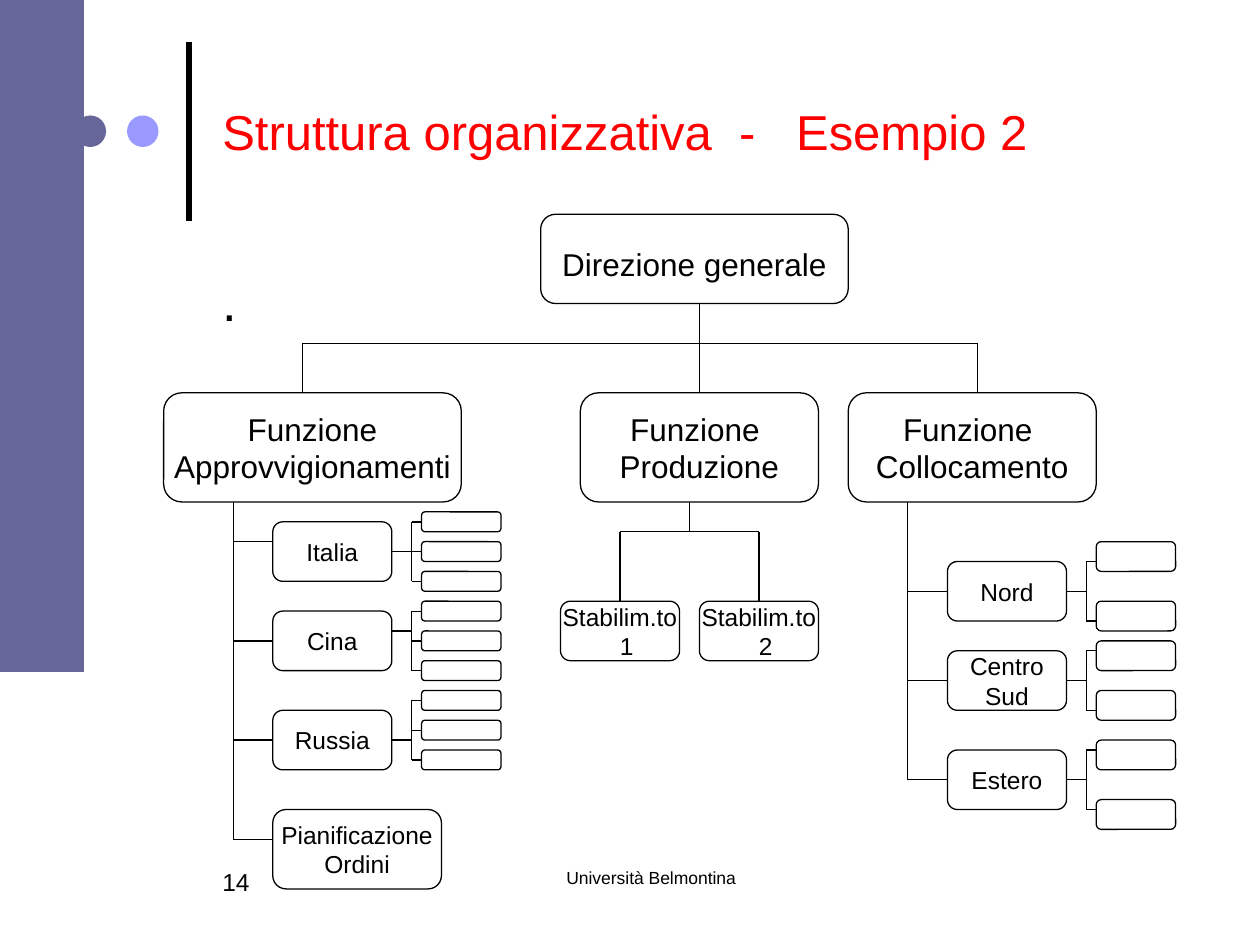
from dataclasses import dataclass, field, replace

from lxml import etree
from pptx import Presentation
from pptx.dml.color import RGBColor
from pptx.enum.shapes import MSO_CONNECTOR, MSO_SHAPE
from pptx.enum.text import MSO_ANCHOR, PP_ALIGN
from pptx.oxml.ns import qn
from pptx.util import Emu, Inches, Pt

BLACK = RGBColor(0x00, 0x00, 0x00)
WHITE = RGBColor(0xFF, 0xFF, 0xFF)
RED = RGBColor(0xFF, 0x00, 0x00)
SLATE = RGBColor(0x66, 0x66, 0x99)
LAVENDER = RGBColor(0x99, 0x99, 0xFF)
UNIT_BOX = MSO_SHAPE.FLOWCHART_ALTERNATE_PROCESS
LEAF_BOX = MSO_SHAPE.ROUNDED_RECTANGLE
RECTANGLE, OVAL = MSO_SHAPE.RECTANGLE, MSO_SHAPE.OVAL
STRAIGHT = MSO_CONNECTOR.STRAIGHT
LEFT, CENTER = PP_ALIGN.LEFT, PP_ALIGN.CENTER
TOP, MIDDLE = MSO_ANCHOR.TOP, MSO_ANCHOR.MIDDLE
SLIDE_WIDTH, SLIDE_HEIGHT = Inches(10), Inches(7.5)
FONT = "Arial"
UNIT_WIDTH, UNIT_HEIGHT = 12, 6
LEAF_WIDTH = 8


@dataclass
class Grid:
    """A square grid with its origin counted in steps, and the joints on it."""

    step: float
    left: float = 0
    top: float = 0
    joints: dict = field(default_factory=dict)

    def point(self, column, row):
        """Return the slide position of a grid point."""
        return (Emu(round((self.left + column) * self.step)),
                Emu(round((self.top + row) * self.step)))

    def area(self, column, row, width, height):
        """Return left, top, width and height of a grid area."""
        size = Emu(round(width * self.step)), Emu(round(height * self.step))
        return *self.point(column, row), *size

    def moved(self, column, row):
        """Return the same grid with its origin moved."""
        return replace(self, left=self.left + column, top=self.top + row)


def write(text_frame, lines, size, color=BLACK, align=CENTER, anchor=MIDDLE):
    """Fill a text frame with one paragraph per line."""
    text_frame.vertical_anchor = anchor
    for index, line in enumerate(lines):
        paragraph = text_frame.add_paragraph() if index else text_frame.paragraphs[0]
        paragraph.alignment = align
        run = paragraph.add_run()
        run.text = line
        run.font.name = FONT
        run.font.size = Pt(size)
        run.font.color.rgb = color


def add_label(slide, grid, area, text, size, color=BLACK, align=LEFT, anchor=TOP):
    """Add a wrapping text box."""
    text_frame = slide.shapes.add_textbox(*grid.area(*area)).text_frame
    text_frame.word_wrap = True
    write(text_frame, [text], size, color, align, anchor)


def add_filled(slide, grid, kind, area, color):
    """Add a flat shape without outline."""
    shape = slide.shapes.add_shape(kind, *grid.area(*area))
    shape.shadow.inherit = False
    shape.fill.solid()
    shape.fill.fore_color.rgb = color
    shape.line.fill.background()
    return shape


def add_box(slide, grid, kind, area, lines=(), size=14):
    """Add an outlined box and register the middles of its sides as joints."""
    shape = add_filled(slide, grid, kind, area, WHITE)
    shape.line.color.rgb = BLACK
    shape.line.width = Pt(0.75)
    shape.text_frame.word_wrap = False
    write(shape.text_frame, lines, size)
    column, row, width, height = area
    middle, center = column + width / 2, row + height / 2
    sides = [(middle, row), (column, center), (middle, row + height), (column + width, center)]
    for site, side in enumerate(sides):
        grid.joints[grid.point(*side)] = shape, site
    return shape


def add_line(slide, grid, start, end, width=0.75):
    """Add a line, joined to a box wherever it ends at the middle of a side."""
    first, last = grid.point(*start), grid.point(*end)
    connector = slide.shapes.add_connector(STRAIGHT, *first, *last)
    connector.line.color.rgb = BLACK
    connector.line.width = Pt(width)
    etree.SubElement(connector._element.spPr, qn("a:effectLst"))
    if first in grid.joints:
        connector.begin_connect(*grid.joints[first])
    if last in grid.joints:
        connector.end_connect(*grid.joints[last])


def draw_frame(slide, grid):
    """Draw the side band, title, body text and footer."""
    add_line(slide, grid, (18, 21), (18, 4), 3)
    add_filled(slide, grid, OVAL, (7.1, 11, 3, 3), SLATE)
    add_filled(slide, grid, OVAL, (12.1, 11, 3, 3), LAVENDER)
    add_filled(slide, grid, RECTANGLE, (0, 0, 8, 64), SLATE)
    add_label(slide, grid, (43, 82, 38, 6), "Università Belmontina", 10, align=CENTER)
    add_label(slide, grid, (20, 82, 17, 6), "14", 14)
    add_label(slide, grid, (20, 2.5, 92, 20), "Struttura organizzativa  -   Esempio 2",
              28, RED, anchor=MIDDLE)
    add_label(slide, grid, (20, 25, 92, 54), ".", 30)


def draw_top_levels(slide, grid):
    """Draw the general management and its three functions."""
    root = add_box(slide, grid, UNIT_BOX, (38, 0, 31, 9), ["Direzione generale"], 18)
    root.text_frame.margin_top = Inches(0.13)
    functions = [
        (0, 30, 14, ["Funzione", "Approvvigionamenti"]),
        (42, 24, 54, ["Funzione ", "Produzione"]),
        (69, 25, 82, ["Funzione ", "Collocamento"]),
    ]
    add_line(slide, grid, (54, 9), (54, 13))
    add_line(slide, grid, (14, 13), (82, 13))
    for column, width, drop, lines in functions:
        add_box(slide, grid, UNIT_BOX, (column, 18, width, 11), lines, 18)
        add_line(slide, grid, (drop, 13), (drop, 18))


def draw_unit(slide, grid, lines, leaf_tops, leaf_height, branch_rows, entry=3, stem=3):
    """Draw a unit fed from a trunk four columns left, and its leaves on the right."""
    add_box(slide, grid, UNIT_BOX, (0, 0, UNIT_WIDTH, UNIT_HEIGHT), lines)
    for row in leaf_tops:
        add_box(slide, grid, LEAF_BOX, (15, row, LEAF_WIDTH, leaf_height))
    add_line(slide, grid, (-4, entry), (0, entry))
    add_line(slide, grid, (UNIT_WIDTH, stem), (14, stem))
    middle = (branch_rows[0] + branch_rows[-1]) / 2
    for row in branch_rows:
        add_line(slide, grid, (14, row), (15, row))
        if row != middle:
            add_line(slide, grid, (14, middle), (14, row))


def draw_supply(slide, grid):
    """Draw the supply countries and the order planning unit."""
    add_line(slide, grid, (0, 0), (0, 34))
    for row, name, first_leaf, entry, stem in [
        (2, "Italia", -1, 2, 3), (11, "Cina", -1, 3, 2), (21, "Russia", -2, 3, 3),
    ]:
        leaf_tops = [first_leaf + 3 * index for index in range(3)]
        branch_rows = [leaf_top + 1 for leaf_top in leaf_tops]
        draw_unit(slide, grid.moved(4, row), [name], leaf_tops, 2, branch_rows, entry, stem)
    add_box(slide, grid, UNIT_BOX, (4, 31, 17, 8), ["Pianificazione", "Ordini"])
    add_line(slide, grid, (0, 34), (4, 34))


def draw_production(slide, grid):
    """Draw the two plants under production."""
    add_line(slide, grid, (7, 0), (7, 3))
    add_line(slide, grid, (0, 3), (14, 3))
    for column, number in [(0, 1), (14, 2)]:
        area = column - UNIT_WIDTH / 2, 10, UNIT_WIDTH, UNIT_HEIGHT
        add_box(slide, grid, UNIT_BOX, area, ["Stabilim.to", f"  {number}"])
        add_line(slide, grid, (column, 3), (column, 10))


def draw_sales(slide, grid):
    """Draw the sales areas, each with two leaves."""
    add_line(slide, grid, (0, 0), (0, 28))
    for row, lines, leaf_tops in [
        (6, ["Nord"], (-2, 4)), (15, ["Centro", "Sud"], (-1, 4)), (25, ["Estero"], (-1, 5)),
    ]:
        draw_unit(slide, grid.moved(4, row), lines, leaf_tops, 3, (0, UNIT_HEIGHT))


def main():
    """Build and save the slide."""
    presentation = Presentation()
    presentation.slide_width, presentation.slide_height = SLIDE_WIDTH, SLIDE_HEIGHT
    slide = presentation.slides.add_slide(presentation.slide_layouts[6])
    draw_frame(slide, Grid(SLIDE_WIDTH / 120))
    chart = Grid(SLIDE_WIDTH / 127, 16.5, 21.6)
    draw_top_levels(slide, chart)
    draw_supply(slide, chart.moved(7, 29))
    draw_production(slide, chart.moved(46, 29))
    draw_sales(slide, chart.moved(75, 29))
    presentation.save("out.pptx")


if __name__ == "__main__":
    main()
